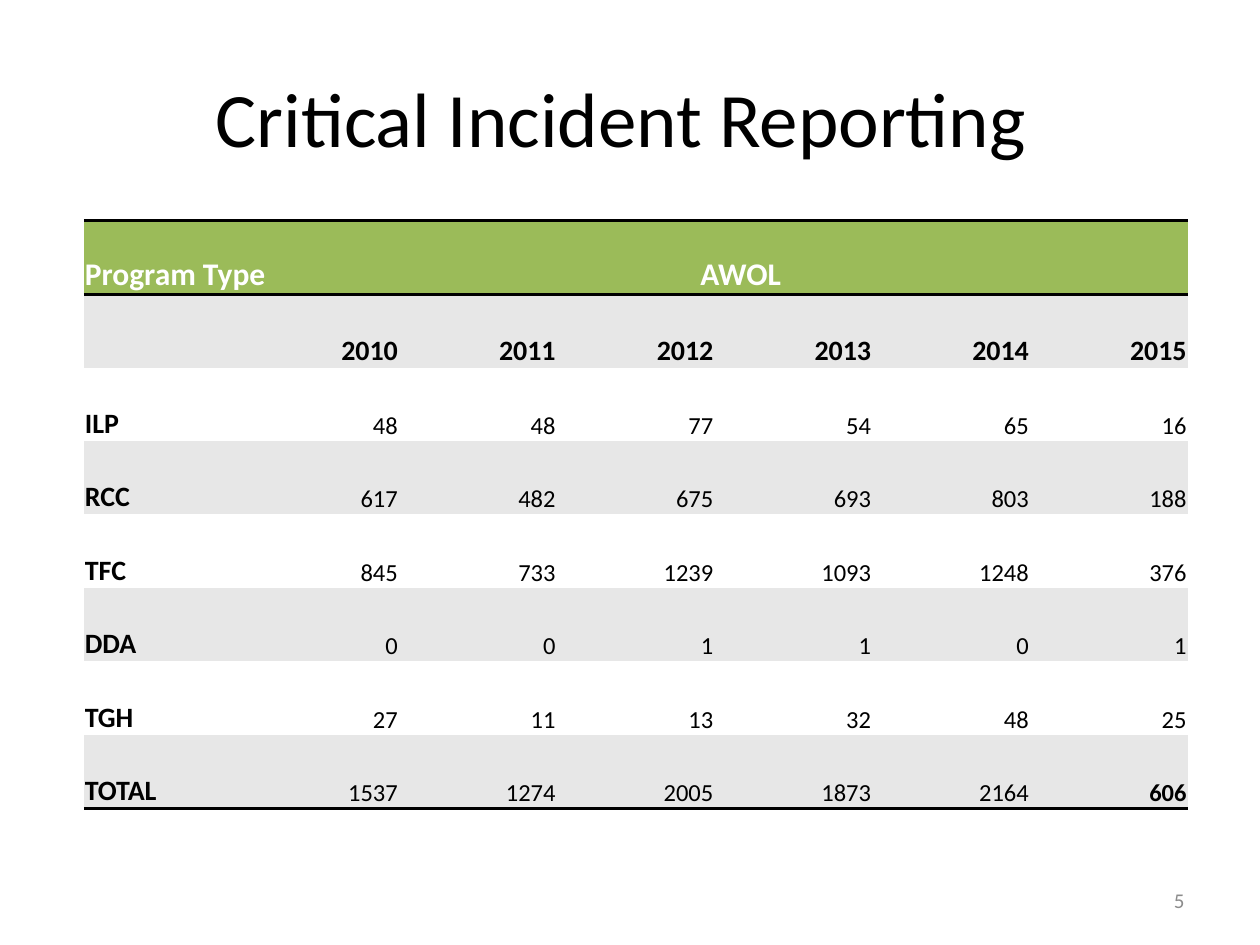
from dataclasses import dataclass

from lxml.etree import SubElement
from pptx import Presentation
from pptx.dml.color import RGBColor
from pptx.enum.text import MSO_ANCHOR as Anchor, PP_ALIGN as Align
from pptx.oxml import parse_xml
from pptx.oxml.ns import nsdecls, qn
from pptx.util import Cm, Pt

BLACK = RGBColor(0x00, 0x00, 0x00)
WHITE = RGBColor(0xFF, 0xFF, 0xFF)
GREEN = RGBColor(0x9B, 0xBB, 0x59)
BAND_GRAY = RGBColor(0xE7, 0xE7, 0xE7)
NUMBER_GRAY = RGBColor(0x8C, 0x8C, 0x8C)

FONT = "Calibri"
NO_STYLE = "{2D5ABB26-0587-4C30-8999-92F81FD0307C}"
COLUMN_WIDTHS = [4.23, 2.12] + [3.18] * 5
ROW_HEIGHT = 1.48
CELL_FORMAT = {
    "vertical_anchor": Anchor.BOTTOM,
    "margin_left": Cm(0.02),
    "margin_right": Cm(0.02),
    "margin_top": Cm(0.02),
    "margin_bottom": Cm(0),
}
ROWS = [
    ["Program Type", "AWOL"],
    ["", 2010, 2011, 2012, 2013, 2014, 2015],
    ["ILP", 48, 48, 77, 54, 65, 16],
    ["RCC", 617, 482, 675, 693, 803, 188],
    ["TFC", 845, 733, 1239, 1093, 1248, 376],
    ["DDA", 0, 0, 1, 1, 0, 1],
    ["TGH", 27, 11, 13, 32, 48, 25],
    ["TOTAL", 1537, 1274, 2005, 1873, 2164, 606],
]
LAST_ROW = len(ROWS) - 1
LAST_COLUMN = len(COLUMN_WIDTHS) - 1


@dataclass(frozen=True)
class TextStyle:
    size: int
    color: RGBColor = BLACK
    bold: bool = False
    align: Align = Align.LEFT


@dataclass(frozen=True)
class Label:
    text: str
    left: float
    top: float
    width: float
    height: float
    style: TextStyle


LABELS = [
    Label("Critical Incident Reporting ", 1.27, 0.76, 22.86, 3.18,
          TextStyle(44, align=Align.CENTER)),
    Label("5", 18.2, 17.65, 5.93, 1.01,
          TextStyle(12, NUMBER_GRAY, align=Align.RIGHT)),
]


def apply_format(target, values: dict) -> None:
    for name, value in values.items():
        setattr(target, name, value)


def write_text(text_frame, text: str, style: TextStyle) -> None:
    paragraph = text_frame.paragraphs[0]
    paragraph.alignment = style.align
    run = paragraph.add_run()
    run.text = text
    apply_format(run.font, {"name": FONT, "size": Pt(style.size), "bold": style.bold})
    run.font.color.rgb = style.color


def add_label(slide, label: Label) -> None:
    box = slide.shapes.add_textbox(
        Cm(label.left), Cm(label.top), Cm(label.width), Cm(label.height))
    apply_format(box.text_frame, {"word_wrap": True, "vertical_anchor": Anchor.MIDDLE})
    write_text(box.text_frame, label.text, label.style)


def add_border(cell, side: str) -> None:
    """Draw a black rule on one side of a cell, before its fill is set."""
    line = SubElement(cell._tc.get_or_add_tcPr(), qn(f"a:{side}"), w=str(Pt(2)))
    line.append(parse_xml(
        f'<a:solidFill {nsdecls("a")}><a:srgbClr val="{BLACK}"/></a:solidFill>'))


def cell_style(row: int, column: int) -> TextStyle:
    if row == 0:
        return TextStyle(18, WHITE, True, Align.CENTER if column else Align.LEFT)
    if column == 0:
        return TextStyle(16, bold=True)
    if row == 1:
        return TextStyle(16, bold=True, align=Align.RIGHT)
    grand_total = (row, column) == (LAST_ROW, LAST_COLUMN)
    return TextStyle(14, bold=grand_total, align=Align.RIGHT)


def format_cell(cell, row: int) -> None:
    apply_format(cell, CELL_FORMAT)
    if row == 0:
        add_border(cell, "lnT")
    if row in (0, LAST_ROW):
        add_border(cell, "lnB")
    cell.fill.solid()
    cell.fill.fore_color.rgb = GREEN if row == 0 else BAND_GRAY if row % 2 else WHITE


def add_incident_table(slide) -> None:
    frame = slide.shapes.add_table(
        len(ROWS), len(COLUMN_WIDTHS), Cm(1.69), Cm(4.45),
        Cm(sum(COLUMN_WIDTHS)), Cm(ROW_HEIGHT * len(ROWS)))
    table = frame.table
    apply_format(table, {"first_row": False, "horz_banding": False})
    table._tbl.tblPr.find(qn("a:tableStyleId")).text = NO_STYLE
    for column, width in zip(table.columns, COLUMN_WIDTHS):
        column.width = Cm(width)
    for row_index, row in enumerate(table.rows):
        row.height = Cm(ROW_HEIGHT)
        for cell in row.cells:
            format_cell(cell, row_index)
        for column_index, value in enumerate(ROWS[row_index]):
            if value != "":
                write_text(row.cells[column_index].text_frame, str(value),
                           cell_style(row_index, column_index))
    table.cell(0, 1).merge(table.cell(0, LAST_COLUMN))


def main() -> None:
    presentation = Presentation()
    apply_format(presentation, {"slide_width": Cm(25.4), "slide_height": Cm(19.05)})
    slide = presentation.slides.add_slide(presentation.slide_layouts[6])
    add_incident_table(slide)
    for label in LABELS:
        add_label(slide, label)
    presentation.save("out.pptx")


if __name__ == "__main__":
    main()
